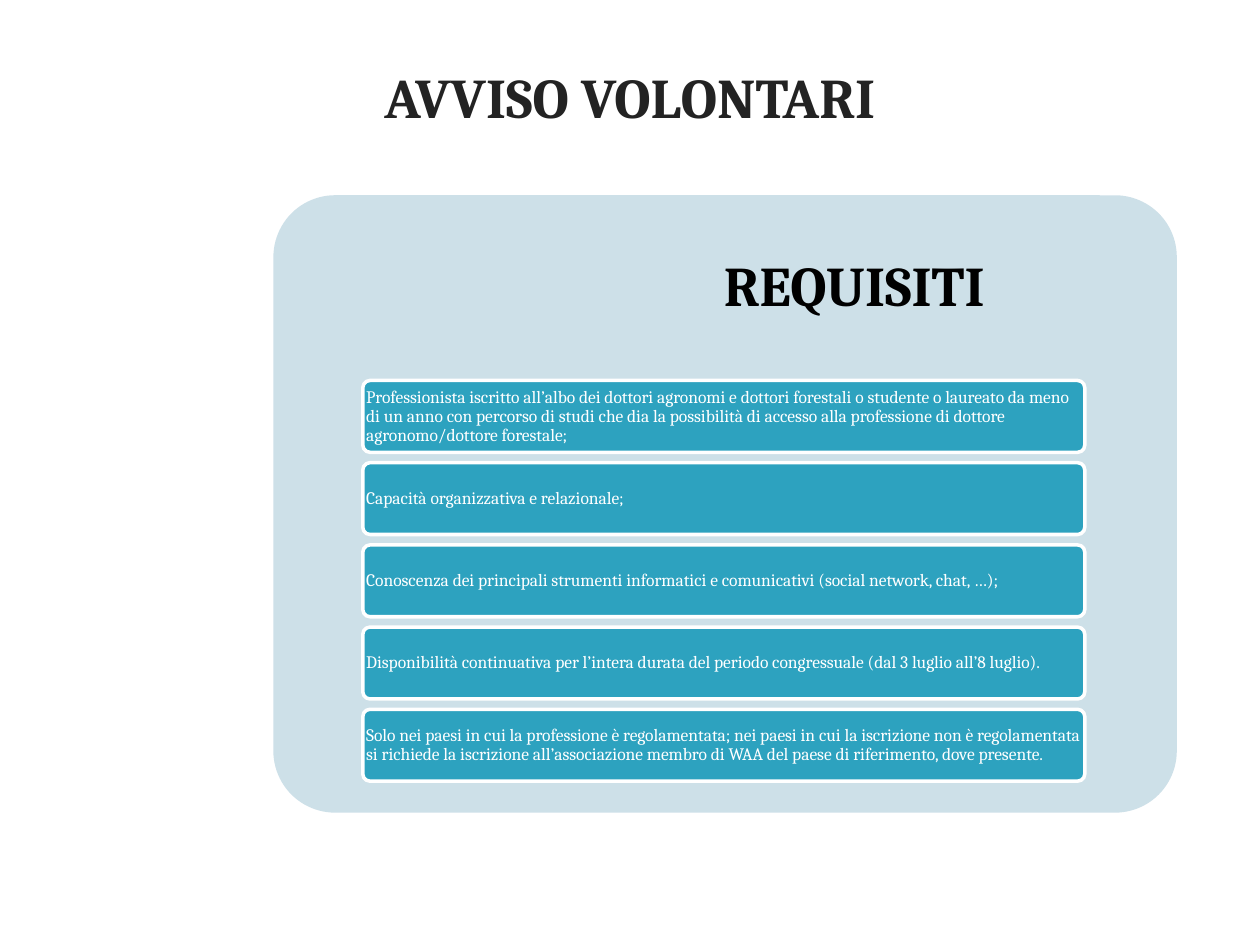
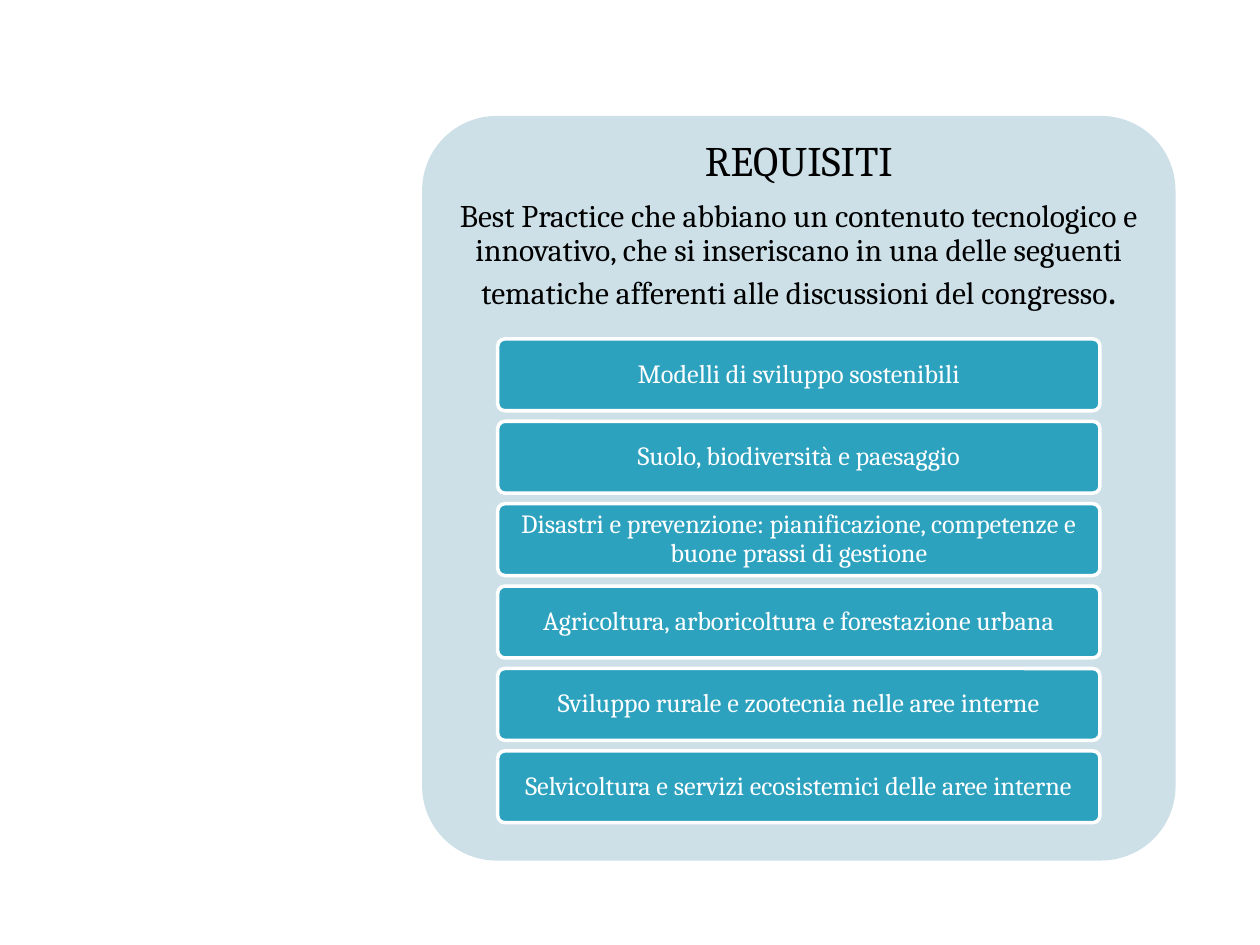
import pptx
import pptx.util
import pptx.dml.color
import pptx.enum.shapes
import pptx.enum.text

Inches = pptx.util.Inches
Align = pptx.enum.text.PP_ALIGN

FONT = "Cambria"
PALE, TEAL, WHITE, BLACK, DARK = "CDE0E8", "2DA2BF", "FFFFFF", "000000", "232323"
BAR = 0.57


def write(shape, runs, size, color=BLACK, bold=False, align=Align.CENTER,
          pad=(0.1, 0.05), wrap=True, lead=0.9):
    """Fill a shape with one paragraph; runs is a text or a list of (text, size)."""
    frame = shape.text_frame
    frame.auto_size = pptx.enum.text.MSO_AUTO_SIZE.NONE
    frame.word_wrap = wrap
    frame.vertical_anchor = pptx.enum.text.MSO_ANCHOR.MIDDLE
    frame.margin_left = frame.margin_right = Inches(pad[0])
    frame.margin_top = frame.margin_bottom = Inches(pad[1])
    para = frame.paragraphs[0]
    para.alignment = align
    para.line_spacing = lead
    for text, pts in [(runs, size)] if isinstance(runs, str) else runs:
        run = para.add_run()
        run.text = text
        font = run.font
        font.name, font.size, font.bold = FONT, pptx.util.Pt(pts), bold
        font.color.rgb = pptx.dml.color.RGBColor.from_string(color)


def block(slide, box, fill, line=None):
    """Add a rounded rectangle."""
    shape = slide.shapes.add_shape(
        pptx.enum.shapes.MSO_SHAPE.ROUNDED_RECTANGLE, *map(Inches, box))
    shape.shadow.inherit = False
    shape.adjustments[0] = 0.1
    shape.fill.solid()
    shape.fill.fore_color.rgb = pptx.dml.color.RGBColor.from_string(fill)
    if line:
        shape.line.color.rgb = pptx.dml.color.RGBColor.from_string(line)
        shape.line.width = pptx.util.Pt(2)
    else:
        shape.line.fill.background()
    return shape


needs = [
    "Professionista iscritto all’albo dei dottori agronomi e dottori forestali o studente "
    "o laureato da meno di un anno con percorso di studi che dia la possibilità di accesso "
    "alla professione di dottore agronomo/dottore forestale;",
    "Capacità organizzativa e relazionale;",
    "Conoscenza dei principali strumenti informatici e comunicativi "
    "(social network, chat, …);",
    "Disponibilità continuativa per l’intera durata del periodo congressuale "
    "(dal 3 luglio all’8 luglio).",
    "Solo nei paesi in cui la professione è regolamentata; nei paesi in cui la iscrizione "
    "non è regolamentata si richiede la iscrizione all’associazione membro di WAA "
    "del paese di riferimento, dove presente.",
]
themes = [
    "Modelli di sviluppo sostenibili",
    "Suolo, biodiversità e paesaggio",
    "Disastri e prevenzione: pianificazione, competenze e buone prassi di gestione",
    "Agricoltura, arboricoltura e forestazione urbana",
    "Sviluppo rurale e zootecnia nelle aree interne",
    "Selvicoltura e servizi ecosistemici delle aree interne",
]
intro = [
    ("Best Practice che abbiano un contenuto tecnologico e innovativo, che si inseriscano "
     "in una delle seguenti tematiche afferenti alle discussioni del congresso", 18),
    (".", 24),
]

pages = [
    dict(
        title="AVVISO VOLONTARI", place=(2.95, 0.44, 5.24, 0.64),
        look=dict(size=32, color=DARK, bold=True, align=Align.LEFT, wrap=False, lead=1),
        panel=(2.17, 1.55, 7.17, 4.9),
        lead="REQUISITI", spot=(4.22, 1.55, 5.12, 1.47), style=dict(size=32, bold=True),
        bars=needs, left=2.88, wide=5.73, first=3.02, last=5.63,
        text=dict(size=10, align=Align.LEFT, pad=(0.01, 0)),
    ),
    dict(
        title="REQUISITI", place=(3.35, 1.04, 5.98, 0.5), look=dict(size=24),
        panel=(3.35, 0.92, 5.98, 5.91),
        lead=intro, spot=(3.35, 1.55, 5.98, 0.98), style=dict(size=18),
        bars=themes, left=3.95, wide=4.78, first=2.69, last=5.96,
        text=dict(size=15, pad=(0.02, 0.01)),
    ),
]

deck = pptx.Presentation()
deck.slide_width, deck.slide_height = Inches(10), Inches(7.5)

for page in pages:
    slide = deck.slides.add_slide(deck.slide_layouts[5])
    title = slide.shapes.title
    title.left, title.top, title.width, title.height = map(Inches, page["place"])
    write(title, page["title"], **page["look"])

    # The panel lies behind the title
    panel = block(slide, page["panel"], PALE)
    title.element.addprevious(panel.element)

    write(slide.shapes.add_textbox(*map(Inches, page["spot"])), page["lead"], **page["style"])

    step = (page["last"] - page["first"]) / (len(page["bars"]) - 1)
    for row, words in enumerate(page["bars"]):
        box = (page["left"], page["first"] + row * step, page["wide"], BAR)
        write(block(slide, box, TEAL, WHITE), words, color=WHITE, **page["text"])

deck.save("out.pptx")
